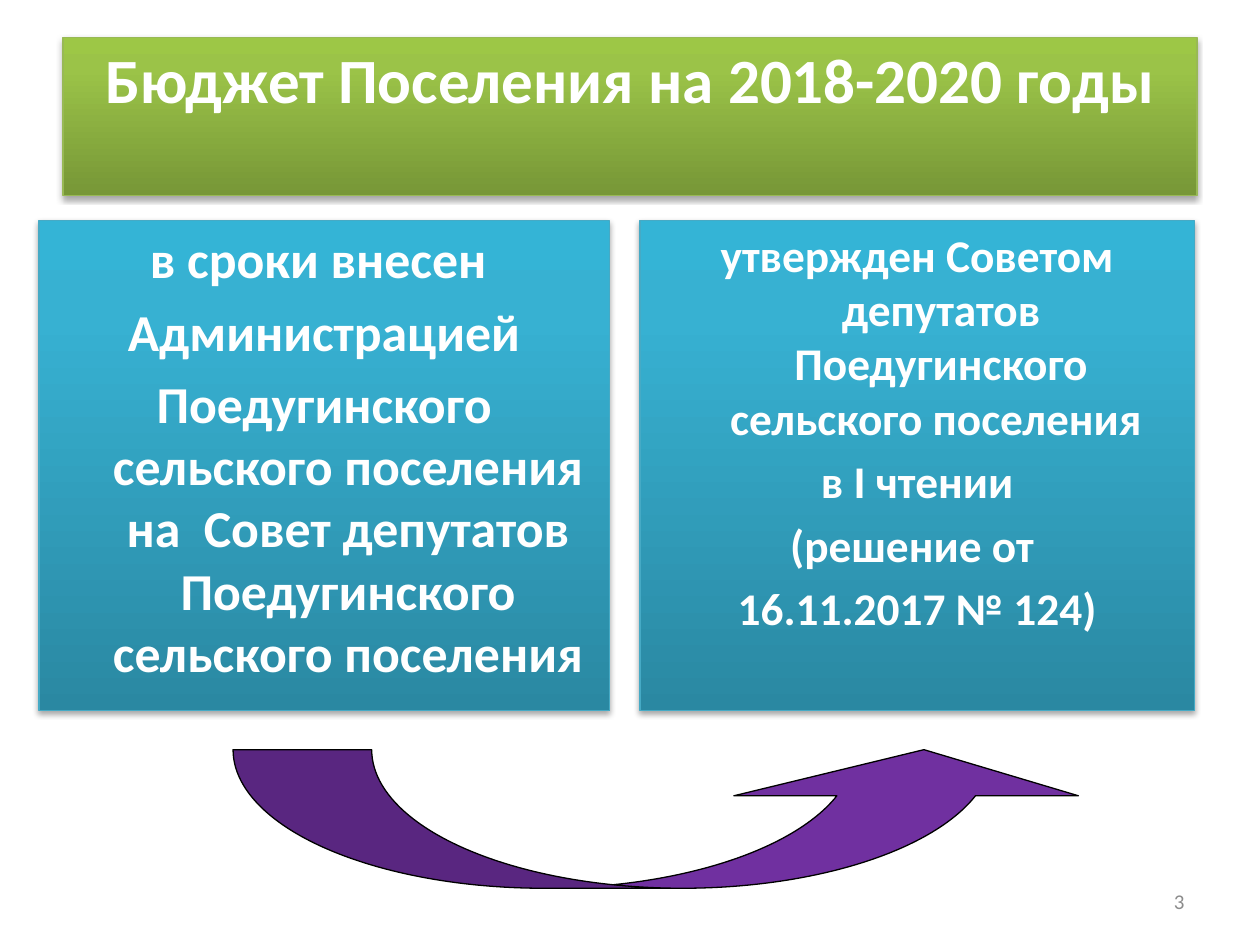
from copy import deepcopy

from lxml import etree
from pptx import Presentation
from pptx.dml.color import RGBColor
from pptx.enum import shapes, text
from pptx.oxml.ns import qn
from pptx.util import Inches, Pt

GREEN = ("779737", "9BC348", "9DC746")
BLUE = ("2A88A2", "37B1D2", "34B4D6")
WHITE = "FFFFFF"
SUBMITTED = (
    "в сроки внесен ",
    "Администрацией",
    "Поедугинского сельского поселения на  Совет депутатов "
    "Поедугинского сельского поселения",
)
APPROVED = (
    "утвержден Советом депутатов Поедугинского сельского поселения ",
    "в I чтении",
    "(решение от ",
    "16.11.2017 № 124)",
)


def color(value):
    """Turn a hex string into a colour."""
    return RGBColor.from_string(value)


def add_preset(slide, kind, box, outline):
    """Add a preset shape with a thin outline and no shadow."""
    preset = slide.shapes.add_shape(kind, *map(Inches, box))
    preset.shadow.inherit = False
    preset.line.color.rgb = color(outline)
    preset.line.width = Pt(0.75)
    return preset


def shade(panel, colors):
    """Fill a panel with a three-colour gradient that runs upwards."""
    panel.fill.gradient()
    panel.fill.gradient_angle = 90
    stop_list = panel.fill._xPr.find(".//" + qn("a:gsLst"))
    stop_list.append(deepcopy(stop_list[-1]))
    for stop, position, value in zip(panel.fill.gradient_stops, (0, 0.8, 1), colors):
        stop.position = position
        stop.color.rgb = color(value)


def cast_shadow(panel):
    """Give a panel a soft shadow below it."""
    effects = panel._element.spPr.find(qn("a:effectLst"))
    shadow = etree.SubElement(
        effects, qn("a:outerShdw"), blurRad=str(Pt(3.1)), dist=str(Pt(1.8)),
        dir="5400000", rotWithShape="0")
    black = etree.SubElement(shadow, qn("a:srgbClr"), val="000000")
    etree.SubElement(black, qn("a:alpha"), val="35000")


def write(frame, lines, size, ink, align, bold=True, indent=0, before=0):
    """Write one paragraph per line into a text frame."""
    frame.word_wrap = True
    for number, line in enumerate(lines):
        paragraph = frame.add_paragraph() if number else frame.paragraphs[0]
        paragraph.alignment = align
        paragraph.space_before = Pt(before)
        properties = paragraph._p.get_or_add_pPr()
        properties.set("marL", str(Inches(indent)))
        properties.set("indent", str(-Inches(indent)))
        run = paragraph.add_run()
        run.text = line
        run.font.name = "Calibri"
        run.font.size = Pt(size)
        run.font.bold = bold
        run.font.color.rgb = color(ink)


def add_panel(slide, box, colors, outline, lines, size, indent=0, before=0):
    """Add a shaded rectangle with centred white text at its top."""
    panel = add_preset(slide, shapes.MSO_SHAPE.RECTANGLE, box, outline)
    shade(panel, colors)
    cast_shadow(panel)
    frame = panel.text_frame
    frame.vertical_anchor = text.MSO_ANCHOR.TOP
    write(frame, lines, size, WHITE, text.PP_ALIGN.CENTER, True, indent, before)
    return panel


def add_arrow(slide):
    """Add the curved arrow that leads from the left panel to the right."""
    arrow = add_preset(slide, shapes.MSO_SHAPE.CURVED_UP_ARROW,
                       (1.85, 5.95, 6.85, 1.1), "000000")
    arrow.fill.solid()
    arrow.fill.fore_color.rgb = color("7030A0")
    for index, value in enumerate((1.243, 2.486, 0.333)):
        arrow.adjustments[index] = value


def add_page_number(slide, number):
    """Add the page number in the lower right corner."""
    box = slide.shapes.add_textbox(*map(Inches, (7.17, 6.95, 2.33, 0.4)))
    box.text_frame.vertical_anchor = text.MSO_ANCHOR.MIDDLE
    write(box.text_frame, [number], 12, "8C8C8C", text.PP_ALIGN.RIGHT, bold=False)


def main():
    """Build the slide and save it."""
    deck = Presentation()
    deck.slide_width, deck.slide_height = Inches(10), Inches(7.5)
    slide = deck.slides.add_slide(deck.slide_layouts[6])
    title = add_panel(slide, (0.5, 0.3, 9, 1.25), GREEN, "98B955",
                      ["Бюджет Поселения на 2018-2020 годы"], 36)
    title.text_frame.margin_top = Inches(0.02)
    for left, width, lines, size in ((0.31, 4.53, SUBMITTED, 29.6),
                                     (5.08, 4.4, APPROVED, 25.9)):
        add_panel(slide, (left, 1.75, width, 3.89), BLUE, "46AAC5",
                  lines, size, indent=0.38, before=size * 0.2)
    add_page_number(slide, "3")
    add_arrow(slide)
    deck.save("out.pptx")


if __name__ == "__main__":
    main()
